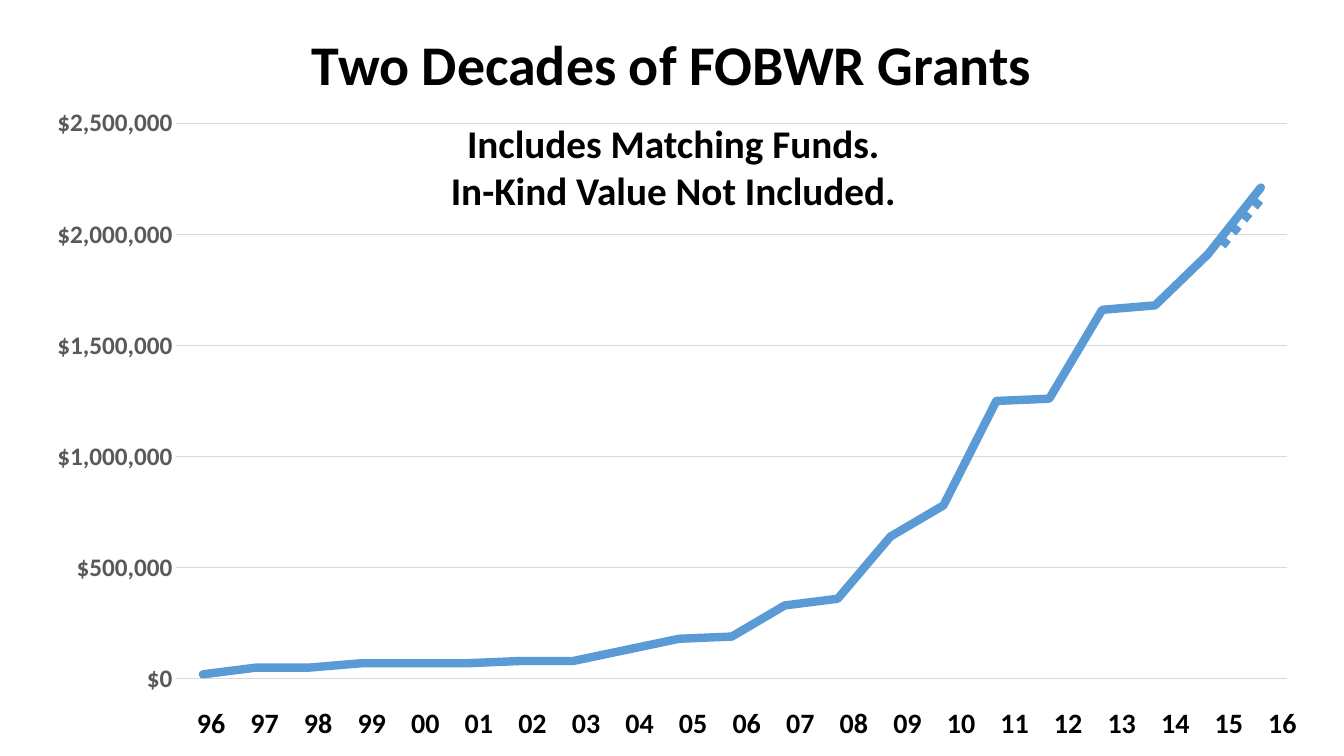
from lxml import etree
from pptx import Presentation
from pptx.chart.data import CategoryChartData
from pptx.dml.color import RGBColor
from pptx.enum.chart import XL_CHART_TYPE, XL_TICK_MARK
from pptx.enum.dml import MSO_LINE
from pptx.enum.shapes import MSO_CONNECTOR
from pptx.enum.text import MSO_ANCHOR, MSO_AUTO_SIZE, PP_ALIGN
from pptx.oxml import parse_xml
from pptx.oxml.ns import nsdecls, qn
from pptx.util import Cm, Pt

LINE_CHART = XL_CHART_TYPE.LINE
NO_TICK = XL_TICK_MARK.NONE
DOTTED = MSO_LINE.ROUND_DOT
STRAIGHT = MSO_CONNECTOR.STRAIGHT
TOP = MSO_ANCHOR.TOP
GROW = MSO_AUTO_SIZE.SHAPE_TO_FIT_TEXT
CENTER = PP_ALIGN.CENTER

COLORS = {"text": "000000", "axis": "595959", "grid": "D9D9D9", "grants": "5B9BD5"}
FONT = "Calibri"
GRANT_LINE = Pt(6)
TITLE_ONLY = 5

# Cumulative grants, 1996 to 2016
FIRST_YEAR = 1996
GRANTS = [20000, 50000, 50000, 70000, 70000, 70000, 80000, 80000, 130000, 180000,
          190000, 330000, 360000, 640000, 780000, 1250000, 1260000, 1660000,
          1680000, 1910000, 2210000]

# Inner plot area as fractions of the chart
PLOT_AREA = {"x": 0.114, "y": 0.045, "w": 0.866, "h": 0.91}

# Year labels under the chart, in cm
YEAR_LEFT, YEAR_TOP, YEAR_STEP = 4.62, 17.65, 1.35


def color(key):
    return RGBColor.from_string(COLORS[key])


def style_font(font, size, key="text", bold=True):
    font.name = FONT
    font.size = Pt(size)
    font.bold = bold
    font.color.rgb = color(key)


def write(frame, text, size=20, key="text", bold=True, align=CENTER):
    frame.word_wrap = True
    frame.auto_size = GROW
    frame.vertical_anchor = TOP
    paragraph = frame.paragraphs[0]
    paragraph.alignment = align
    run = paragraph.add_run()
    run.text = text
    style_font(run.font, size, key, bold)


class GrantSlide:
    def __init__(self, deck):
        self.slide = deck.slides.add_slide(deck.slide_layouts[TITLE_ONLY])
        self.shapes = self.slide.shapes

    def title(self, text, left, top, width, height, **style):
        title = self.shapes.title
        title.left, title.top = Cm(left), Cm(top)
        title.width, title.height = Cm(width), Cm(height)
        write(title.text_frame, text, **style)

    def label(self, text, left, top, width, height, **style):
        box = self.shapes.add_textbox(Cm(left), Cm(top), Cm(width), Cm(height))
        write(box.text_frame, text, **style)

    def dotted_line(self, x1, y1, x2, y2):
        line = self.shapes.add_connector(STRAIGHT, Cm(x1), Cm(y1), Cm(x2), Cm(y2))
        line.line.color.rgb = color("grants")
        line.line.width = GRANT_LINE
        line.line.dash_style = DOTTED
        etree.SubElement(line._element.spPr, qn("a:effectLst"))

    def line_chart(self, values, left, top, width, height):
        data = CategoryChartData()
        data.categories = [str(n + 1) for n in range(len(values))]
        data.add_series("Series 1", values)
        chart = self.shapes.add_chart(LINE_CHART, Cm(left), Cm(top),
                                      Cm(width), Cm(height), data).chart
        chart.has_legend = False
        chart.has_title = False
        style_font(chart.font, 10, bold=False)
        self.place_plot(chart)

        # Axes
        chart.category_axis.visible = False
        dollars = chart.value_axis
        dollars.minimum_scale, dollars.maximum_scale = 0, 2500000
        dollars.major_unit = 500000
        dollars.major_tick_mark = dollars.minor_tick_mark = NO_TICK
        dollars.format.line.fill.background()
        dollars.major_gridlines.format.line.color.rgb = color("grid")
        dollars.major_gridlines.format.line.width = Pt(0.75)
        dollars.tick_labels.number_format = '"$"#,##0'
        dollars.tick_labels.number_format_is_linked = False
        style_font(dollars.tick_labels.font, 18, "axis")

        # Grant line
        plot = chart.plots[0]
        plot.vary_by_categories = False
        grants = plot.series[0]
        grants.smooth = False
        grants.format.line.color.rgb = color("grants")
        grants.format.line.width = GRANT_LINE
        grants.format.line._get_or_add_ln().set("cap", "rnd")

    def place_plot(self, chart):
        modes = '<c:layoutTarget val="inner"/><c:xMode val="edge"/><c:yMode val="edge"/>'
        sizes = "".join(f'<c:{k} val="{v}"/>' for k, v in PLOT_AREA.items())
        layout = parse_xml(f'<c:layout {nsdecls("c")}><c:manualLayout>{modes}{sizes}'
                           '</c:manualLayout></c:layout>')
        plot_area = chart._chartSpace.chart.plotArea
        for automatic in plot_area.findall(qn("c:layout")):
            plot_area.remove(automatic)
        plot_area.insert(0, layout)


def main():
    deck = Presentation()
    deck.slide_width, deck.slide_height = Cm(33.87), Cm(19.05)
    page = GrantSlide(deck)

    # Chart and title
    page.line_chart(GRANTS, 0.76, 2.41, 32.33, 15.39)
    page.title("Two Decades of FOBWR Grants", 3.4, 0.61, 27.05, 1.96, size=40)

    # Year labels
    for i in range(len(GRANTS)):
        year = f"{(FIRST_YEAR + i) % 100:02d}"
        page.label(year, YEAR_LEFT + i * YEAR_STEP, YEAR_TOP, 1.4, 1.12)

    # Dotted last stretch and note on the figures
    page.dotted_line(31.75, 5.05, 30.78, 6.22)
    page.label("Includes Matching Funds. In-Kind Value Not Included.",
               11.02, 2.87, 11.89, 2.64, size=28)

    deck.save("out.pptx")


if __name__ == "__main__":
    main()
